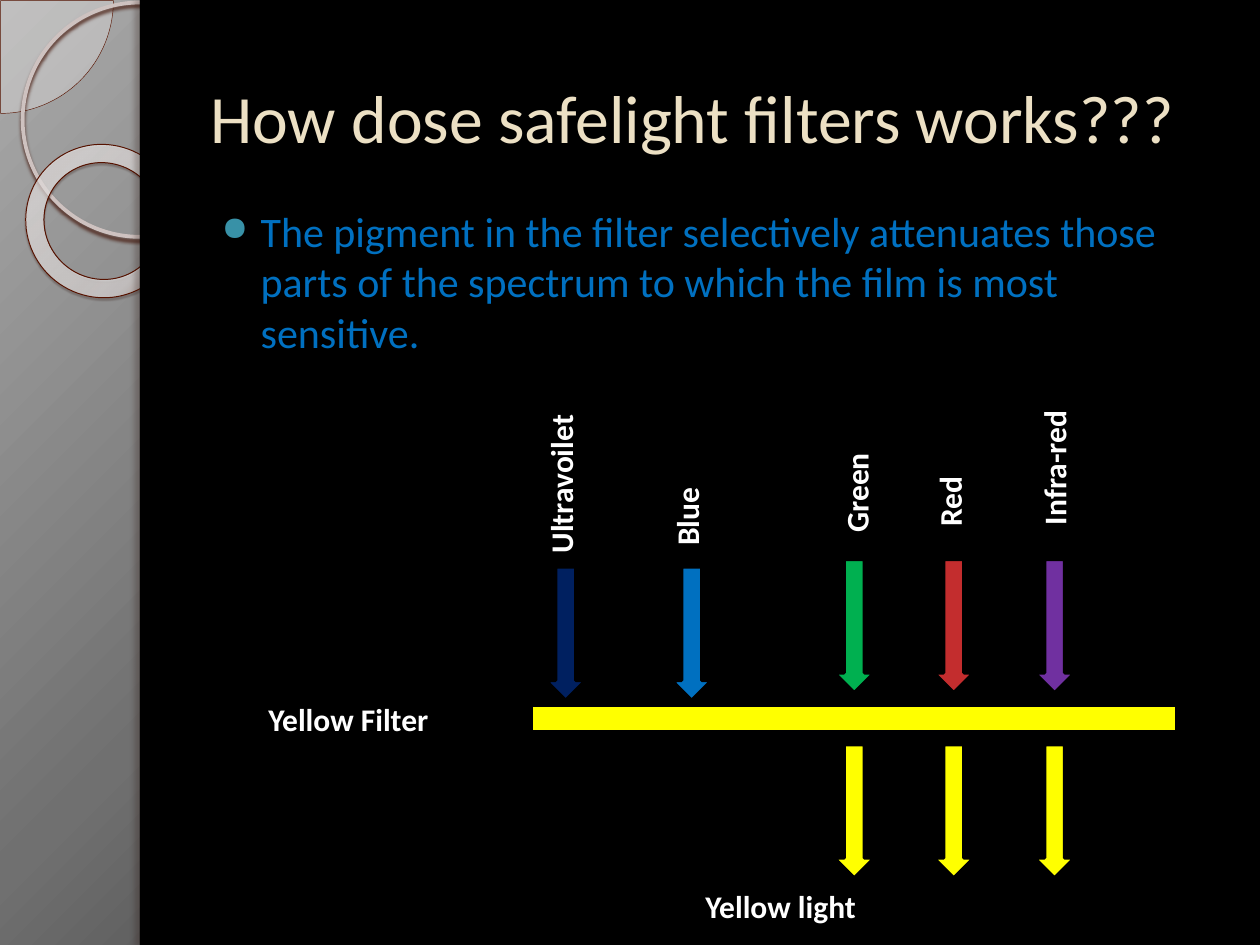
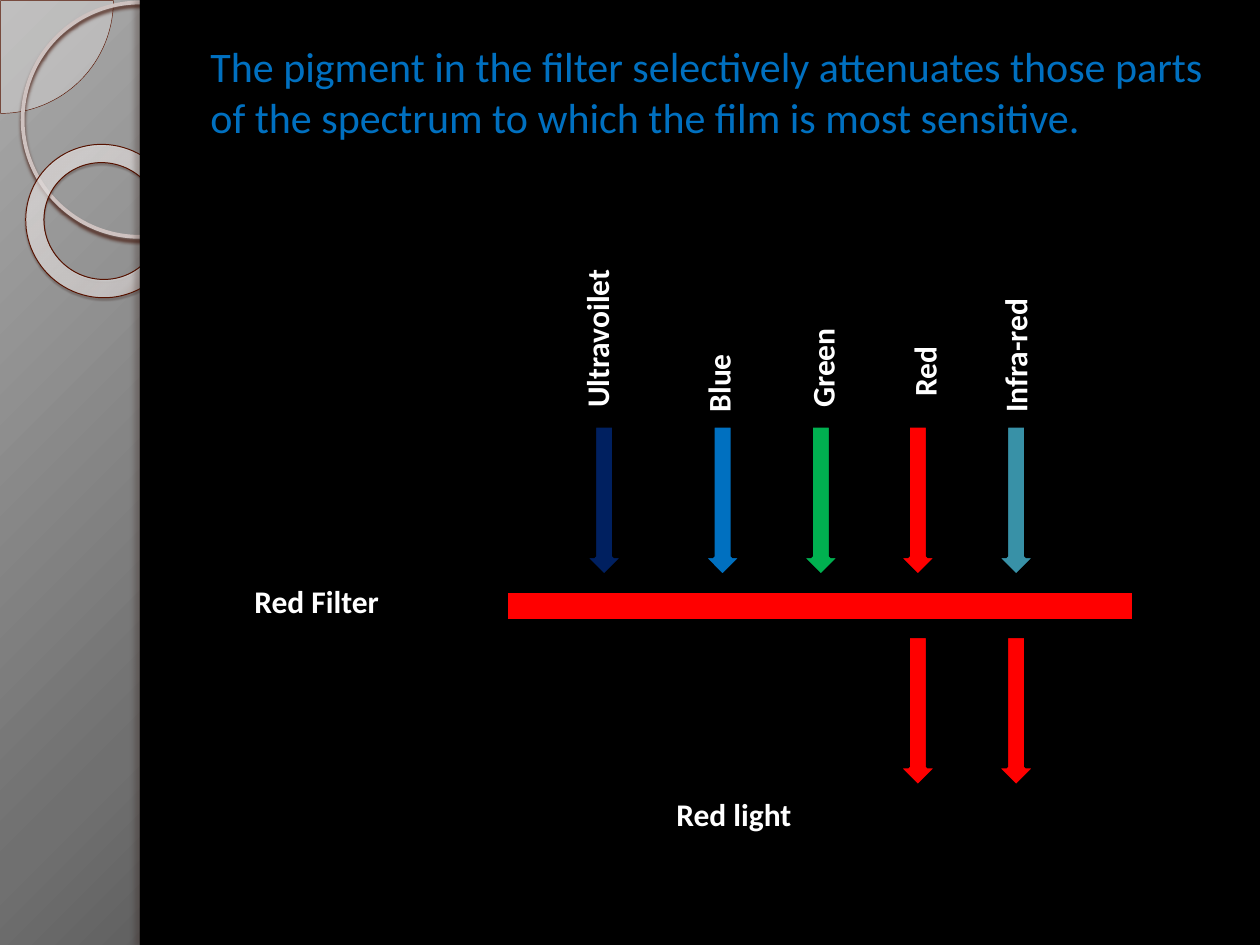
from lxml import etree
from pptx import Presentation, util as u
from pptx.dml.color import RGBColor
from pptx.enum import shapes as s, text as t
from pptx.oxml import ns

# Colours
BLACK = RGBColor(0x00, 0x00, 0x00)
WHITE = RGBColor(0xFF, 0xFF, 0xFF)
CREAM = RGBColor(0xEC, 0xE0, 0xC4)
BLUE = RGBColor(0x00, 0x70, 0xC0)
NAVY = RGBColor(0x00, 0x20, 0x60)
GREEN = RGBColor(0x00, 0xB0, 0x50)
BRICK = RGBColor(0xC3, 0x2D, 0x2E)
PURPLE = RGBColor(0x70, 0x30, 0xA0)
TEAL = RGBColor(0x38, 0x91, 0xA7)
YELLOW = RGBColor(0xFF, 0xFF, 0x00)
RED = RGBColor(0xFF, 0x00, 0x00)
MIST = RGBColor(0xEC, 0xEA, 0xE9)
PIE_EDGE = RGBColor(0x59, 0x15, 0x02)
RING = RGBColor(0xCE, 0xC2, 0xC0)
RING_SHADOW = RGBColor(0x44, 0x17, 0x0B)
DONUT_EDGE = RGBColor(0x56, 0x12, 0x00)
DONUT_SHADOW = RGBColor(0x26, 0x09, 0x01)
PANEL_SHADOW = RGBColor(0x29, 0x13, 0x0D)
BACKDROP = [(0, RGBColor(0xAB, 0xAB, 0xAB), 100), (40, RGBColor(0x70, 0x70, 0x70), 100),
            (100, BLACK, 100)]
DONUT_FILL = [(0, RGBColor(0xF4, 0xF2, 0xF2), 70), (70, RGBColor(0xF9, 0xF8, 0xF8), 55),
              (100, RGBColor(0x5E, 0x14, 0x00), 60)]

FONT = "Calibri"
SHAPE = s.MSO_SHAPE
COLUMNS, ROWS = 100, 75
PIGMENT = ("The pigment in the filter selectively attenuates those parts "
           "of the spectrum to which the film is most sensitive.")


def add(parent, tag, **attributes):
    child = etree.SubElement(parent, ns.qn(tag))
    for key, value in attributes.items():
        child.set(key, str(value))
    return child


def add_color(parent, color, opacity):
    add(add(parent, "a:srgbClr", val=color), "a:alpha", val=opacity * 1000)


def radial_fill(owner, fill, stops, focus):
    """Fill the owner with rings of colour around a focus given in percent."""
    fill.solid()
    solid = owner.find(".//" + ns.qn("a:solidFill"))
    grad = etree.Element(ns.qn("a:gradFill"), rotWithShape="1")
    stop_list = add(grad, "a:gsLst")
    for position, color, opacity in stops:
        add_color(add(stop_list, "a:gs", pos=position * 1000), color, opacity)
    add(add(grad, "a:path", path="circle"), "a:fillToRect",
        **{side: share * 1000 for side, share in zip("ltrb", focus)})
    solid.getparent().replace(solid, grad)


class Deck:
    """Holds the shared style and the slide being drawn."""

    def __init__(self):
        self.prs = Presentation()
        self.prs.slide_width, self.prs.slide_height = u.Inches(10), u.Inches(7.5)
        self.layout = self.prs.slide_layouts[5]
        self.slide = None

    def box(self, left, top, width, height):
        col, row = self.prs.slide_width / COLUMNS, self.prs.slide_height / ROWS
        return [round(n * unit) for n, unit in
                zip((left, top, width, height), (col, row, col, row))]

    def new_slide(self):
        self.slide = self.prs.slides.add_slide(self.layout)

    def shape(self, kind, place, fill=None, edge=None, edge_pt=2, opacity=100, shadow=None):
        shape = self.slide.shapes.add_shape(kind, *self.box(*place))
        shape.shadow.inherit = False
        if fill is None:
            shape.fill.background()
        else:
            shape.fill.solid()
            shape.fill.fore_color.rgb = fill
            if opacity < 100:
                add(shape.element.find(".//" + ns.qn("a:srgbClr")), "a:alpha",
                    val=opacity * 1000)
        if edge is None:
            shape.line.fill.background()
        else:
            shape.line.color.rgb = edge
            shape.line.width = u.Pt(edge_pt)
        if shadow:
            color, strength, blur, distance, angle = shadow
            effects = shape.element.find(".//" + ns.qn("a:effectLst"))
            add_color(add(effects, "a:outerShdw", blurRad=u.Pt(blur), dist=u.Pt(distance),
                          dir=angle * 60000, algn="tl", rotWithShape=0), color, strength)
        return shape

    def set_words(self, frame, words, size, color, bold=False):
        frame.text = words
        frame.word_wrap = True
        frame.auto_size = t.MSO_AUTO_SIZE.NONE
        paragraph = frame.paragraphs[0]
        paragraph.alignment = t.PP_ALIGN.LEFT
        font = paragraph.runs[0].font
        font.name, font.size, font.bold = FONT, u.Pt(size), bold
        font.color.rgb = color

    def title(self, words, size, color, space_below=0.05):
        title = self.slide.shapes.title
        title.left, title.top, title.width, title.height = self.box(15.7, 3, 82, 12.5)
        self.set_words(title.text_frame, words, size, color)
        title.text_frame.vertical_anchor = t.MSO_ANCHOR.MIDDLE
        title.text_frame.margin_bottom = u.Inches(space_below)

    def label(self, words, place, turn=0, size=18, color=WHITE, bold=True):
        label = self.slide.shapes.add_textbox(*self.box(*place))
        label.rotation = turn
        self.set_words(label.text_frame, words, size, color, bold)
        return label

    def bullet(self, words, place):
        body = self.label(words, place, size=24, color=BLUE, bold=False)
        props = body.text_frame.paragraphs[0]._p.get_or_add_pPr()
        props.set("marL", str(u.Inches(0.4)))
        props.set("indent", str(u.Inches(-0.31)))
        add(add(props, "a:buClr"), "a:srgbClr", val=TEAL)
        add(props, "a:buSzPct", val=80000)
        add(props, "a:buChar", char="●")

    def decorate_layout(self):
        """Draw the side band on the current slide, then hand it to the layout."""
        for holder in list(self.layout.placeholders):
            if holder.placeholder_format.type != s.PP_PLACEHOLDER.TITLE:
                holder.element.getparent().remove(holder.element)
        radial_fill(self.layout.element, self.layout.background.fill, BACKDROP,
                    (-24, -20, 124, 120))

        corner = self.shape(SHAPE.PIE, (-8.9, -8.9, 17.9, 17.9), MIST, PIE_EDGE, 0.25, 33)
        corner.adjustments[0], corner.adjustments[1] = 0, 54.02
        ring = self.shape(SHAPE.OVAL, (1.8, 0.2, 18.6, 18.6), None, RING, 2.15,
                          shadow=(RING_SHADOW, 85, 2, 2, 90))
        donut = self.shape(SHAPE.DONUT, (2, 11.5, 12.3, 12.1), MIST, DONUT_EDGE, 0.58,
                           shadow=(DONUT_SHADOW, 35, 1, 1.2, 75))
        donut.rotation = 38.6
        donut.adjustments[0] = 0.12
        radial_fill(donut.element, donut.fill, DONUT_FILL, (-408, -50, 508, 150))
        panel = self.shape(SHAPE.RECTANGLE, (11.1, 0, 88.9, ROWS), BLACK)
        panel_edge = self.shape(SHAPE.RECTANGLE, (11.1, 0, 0.8, ROWS), BLACK,
                                shadow=(PANEL_SHADOW, 25, 3, 3, 180))
        for part in (corner, ring, donut, panel, panel_edge):
            self.layout.shapes.element.append(part.element)

    def filter_diagram(self, color, bar, arrow_size, out_top, label_height, rays):
        """Rays fall on a filter bar; those that pass leave in its colour."""
        self.shape(SHAPE.RECTANGLE, bar, color, BLACK)
        for name, ray_color, left, top, passes, label_place in rays:
            self.shape(SHAPE.DOWN_ARROW, (left, top, *arrow_size), ray_color, BLACK)
            if passes:
                self.shape(SHAPE.DOWN_ARROW, (left, out_top, *arrow_size), color, BLACK)
            self.label(name, (*label_place, label_height), turn=270)


def main():
    deck = Deck()

    # Yellow filter
    deck.new_slide()
    deck.decorate_layout()
    deck.title("How dose safelight filters works???", 38.7, CREAM)
    deck.bullet(PIGMENT, (15.7, 15.8, 82, 52.5))
    # Ray: name, colour, arrow left and top, passes, label left, top and length
    deck.filter_diagram(YELLOW, (42.2, 56, 51.2, 2.1), (3.2, 10.6), 59.1, 4, [
        ("Ultravoilet", NAVY, 43.3, 45, False, (36.2, 34.6, 16.6)),
        ("Blue", BLUE, 53.3, 45, False, (46.1, 33.9, 16.8)),
        ("Green", GREEN, 66.2, 44.4, True, (61.4, 34.7, 13.1)),
        ("Red", BRICK, 74.1, 44.4, True, (70.2, 35.6, 10.3)),
        ("Infra-red", PURPLE, 82.1, 44.4, True, (74.4, 31.4, 18.5)),
    ])
    deck.label("Yellow light", (55, 69.9, 15.5, 4))
    filter_name = deck.label("Yellow Filter", (17.5, 55.1, 22.5, 4))
    filter_name.text_frame.margin_left = u.Inches(0.38)

    # Red filter
    deck.new_slide()
    deck.title(PIGMENT, 24, BLUE, space_below=0.45)
    deck.filter_diagram(RED, (40.2, 46.9, 49.8, 2.4), (3.1, 11.9), 50.5, 4.3, [
        ("Ultravoilet", NAVY, 46.4, 33.8, False, (37.2, 20.9, 20.6)),
        ("Blue", BLUE, 55.8, 33.8, False, (49.9, 24.3, 14.5)),
        ("Green", GREEN, 63.6, 33.8, False, (56.9, 22.7, 17)),
        ("Red", RED, 71.3, 33.8, True, (66.5, 23.3, 14)),
        ("Infra-red", TEAL, 79.1, 33.8, True, (71.3, 22.2, 18.8)),
    ])
    deck.label("Red light", (52.7, 62.6, 17.6, 4))
    deck.label("Red Filter", (19.2, 45.7, 18.8, 4))

    deck.prs.save("out.pptx")


if __name__ == "__main__":
    main()
